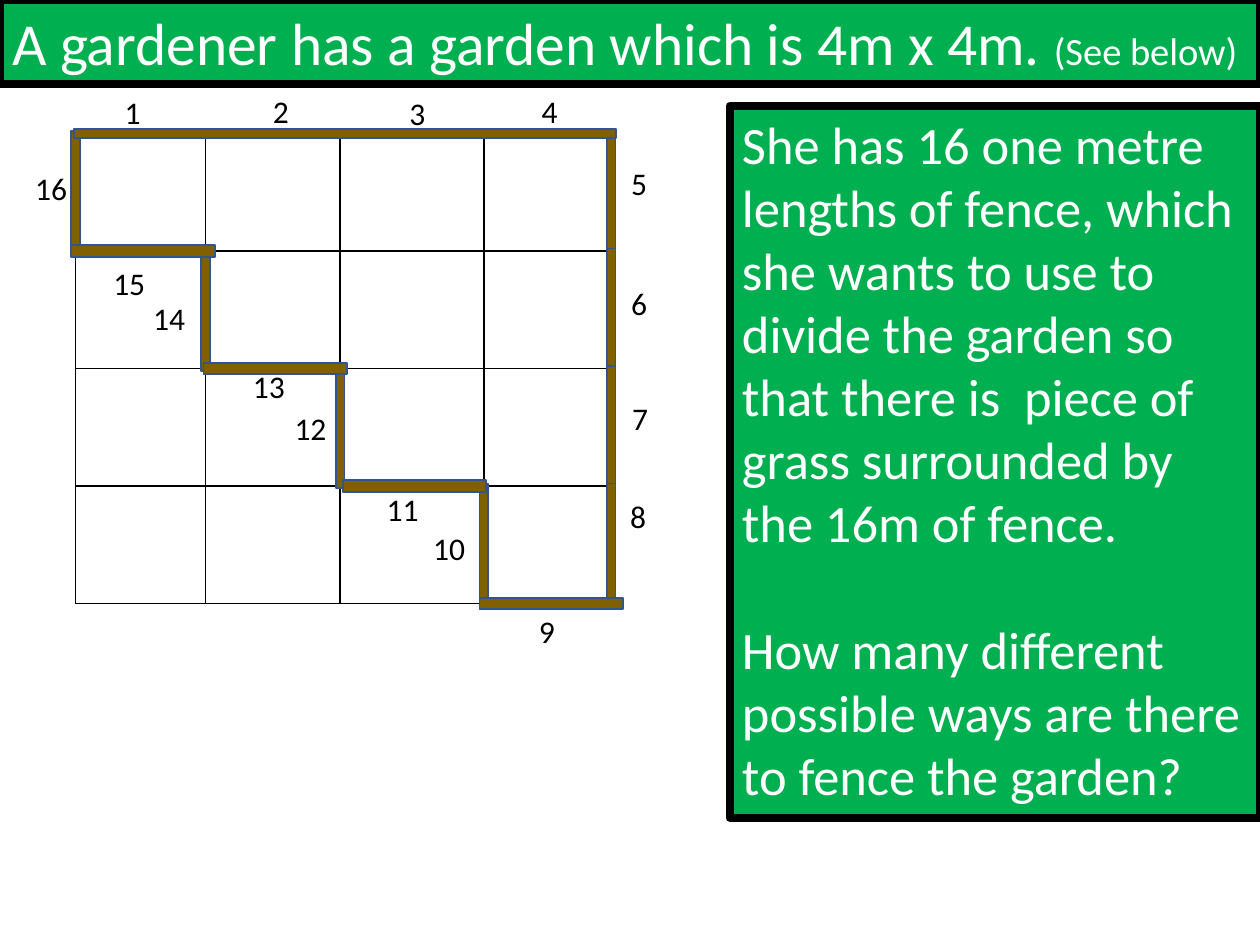
from dataclasses import dataclass
from itertools import accumulate, pairwise
from lxml.etree import SubElement as Sub
from pptx import Presentation as Deck
from pptx.dml.color import RGBColor as Rgb
from pptx.enum.shapes import MSO_SHAPE as Kind
from pptx.enum.text import MSO_ANCHOR as Anchor, PP_ALIGN as Align
from pptx.oxml.ns import qn
from pptx.util import Inches, Pt


@dataclass(frozen=True)
class Theme:
    font: str = "Calibri"
    grass: str = "00B050"
    wood: str = "806000"
    edge: str = "325491"
    ink: str = "000000"
    paper: str = "FFFFFF"
    title: int = 34
    aside: int = 22
    body: int = 30
    label: int = 18
    gap: float = 36.6
    frame: float = 4.5
    thin: float = 1


@dataclass(frozen=True)
class Box:
    x: float
    y: float
    w: float
    h: float

    def emu(self):
        return [Inches(n) for n in (self.x, self.y, self.w, self.h)]

    def at(self, across, down, w, h):
        return Box(self.x + self.w * across / 100, self.y + self.h * down / 100, w, h)


LOOK = Theme()
PAGE = Box(0, 0, 10, 7.5)
COLS = (1.03, 1.07, 1.14, 1.03)
ROWS = 4
POST = (0.97, 0.07)
RAIL = (1.14, 0.09)
LABELS = (
    (6.8, -9.9), (34.3, -10.2), (59.6, -9.7), (84.1, -10.2),
    (100.7, 5.1), (100.7, 30.8), (100.9, 55.2), (100.5, 76.1),
    (83.6, 100.5), (64, 82.8), (55.4, 74.5), (38.3, 57.4),
    (30.6, 48.3), (12.1, 33.8), (4.7, 26.5), (-9.8, 6.2),
)


def style(font, size, color):
    font.name = LOOK.font
    font.size = Pt(size)
    font.color.rgb = Rgb.from_string(color)


def rect(slide, box, fill, line, width):
    shape = slide.shapes.add_shape(Kind.RECTANGLE, *box.emu())
    shape.shadow.inherit = False
    shape.fill.solid()
    shape.fill.fore_color.rgb = Rgb.from_string(fill)
    shape.line.color.rgb = Rgb.from_string(line)
    shape.line.width = Pt(width)
    return shape


def panel(slide, box, size, lines):
    frame = rect(slide, box, LOOK.grass, LOOK.ink, LOOK.frame).text_frame
    frame.word_wrap = True
    frame.vertical_anchor = Anchor.TOP
    for i, line in enumerate(lines):
        para = frame.add_paragraph() if i else frame.paragraphs[0]
        para.alignment = Align.LEFT
        para.space_before = Pt(LOOK.gap if i else 0)
        style(para.font, size, LOOK.paper)
        para.add_run().text = line
    return frame


def header(slide, box):
    frame = panel(slide, box, LOOK.title, ["A gardener has a garden which is 4m x 4m. "])
    aside = frame.paragraphs[0].add_run()
    aside.text = "(See below)"
    aside.font.size = Pt(LOOK.aside)


def task(slide, box):
    panel(slide, box, LOOK.body, [
        "She has 16 one metre lengths of fence, which she wants to use to divide "
        "the garden so that there is  piece of grass surrounded by the 16m of fence.",
        "How many different possible ways are there to fence the garden?",
    ])


def border(cell):
    props = cell._tc.get_or_add_tcPr()
    for side in ("lnL", "lnR", "lnT", "lnB"):
        line = Sub(props, qn(f"a:{side}"), w=str(Pt(LOOK.thin)))
        Sub(Sub(line, qn("a:solidFill")), qn("a:srgbClr"), val=LOOK.ink)


def plot(slide, box):
    table = slide.shapes.add_table(ROWS, len(COLS), *box.emu()).table
    for col, width in zip(table.columns, COLS):
        col.width = Inches(width)
    for row in table.rows:
        row.height = Inches(box.h / ROWS)
    for cell in table.iter_cells():
        border(cell)
        cell.fill.solid()
        cell.fill.fore_color.rgb = Rgb.from_string(LOOK.paper)


def bar(slide, x, y, size, turn=0):
    w, h = size
    box = Box(x - w / 2, y - h / 2, w, h)
    rect(slide, box, LOOK.wood, LOOK.edge, LOOK.thin).rotation = turn


def fence(slide, box):
    edges = [box.x + n for n in accumulate(COLS, initial=0)]
    step = box.h / ROWS
    mids = [box.y + step * (i + 0.5) for i in range(ROWS)]
    for x, y in zip(edges, mids):
        bar(slide, x, y, POST, 90)
    for y in mids:
        bar(slide, edges[-1] - 0.02, y, POST, 90)
    for (left, right), y in zip(pairwise(edges), mids):
        bar(slide, (left + right) / 2 + 0.02, y + step / 2, RAIL)
    bar(slide, box.x + box.w / 2, box.y, (4.3, 0.07))


def count(slide, box):
    for num, (across, down) in enumerate(LABELS, 1):
        spot = box.at(across, down, 0.29 if num < 10 else 0.47, 0.4)
        frame = slide.shapes.add_textbox(*spot.emu()).text_frame
        frame.word_wrap = True
        para = frame.paragraphs[0]
        para.text = str(num)
        style(para.font, LOOK.label, LOOK.ink)


def garden(slide, box):
    plot(slide, box)
    fence(slide, box)
    count(slide, box)


def main():
    deck = Deck()
    deck.slide_width, deck.slide_height = Inches(PAGE.w), Inches(PAGE.h)
    slide = deck.slides.add_slide(deck.slide_layouts[6])
    header(slide, PAGE.at(0, 0, PAGE.w, 0.67))
    task(slide, PAGE.at(57.9, 11.2, 4.21, 5.65))
    garden(slide, PAGE.at(6, 14.13, 4.28, 3.73))
    deck.save("out.pptx")


if __name__ == "__main__":
    main()
